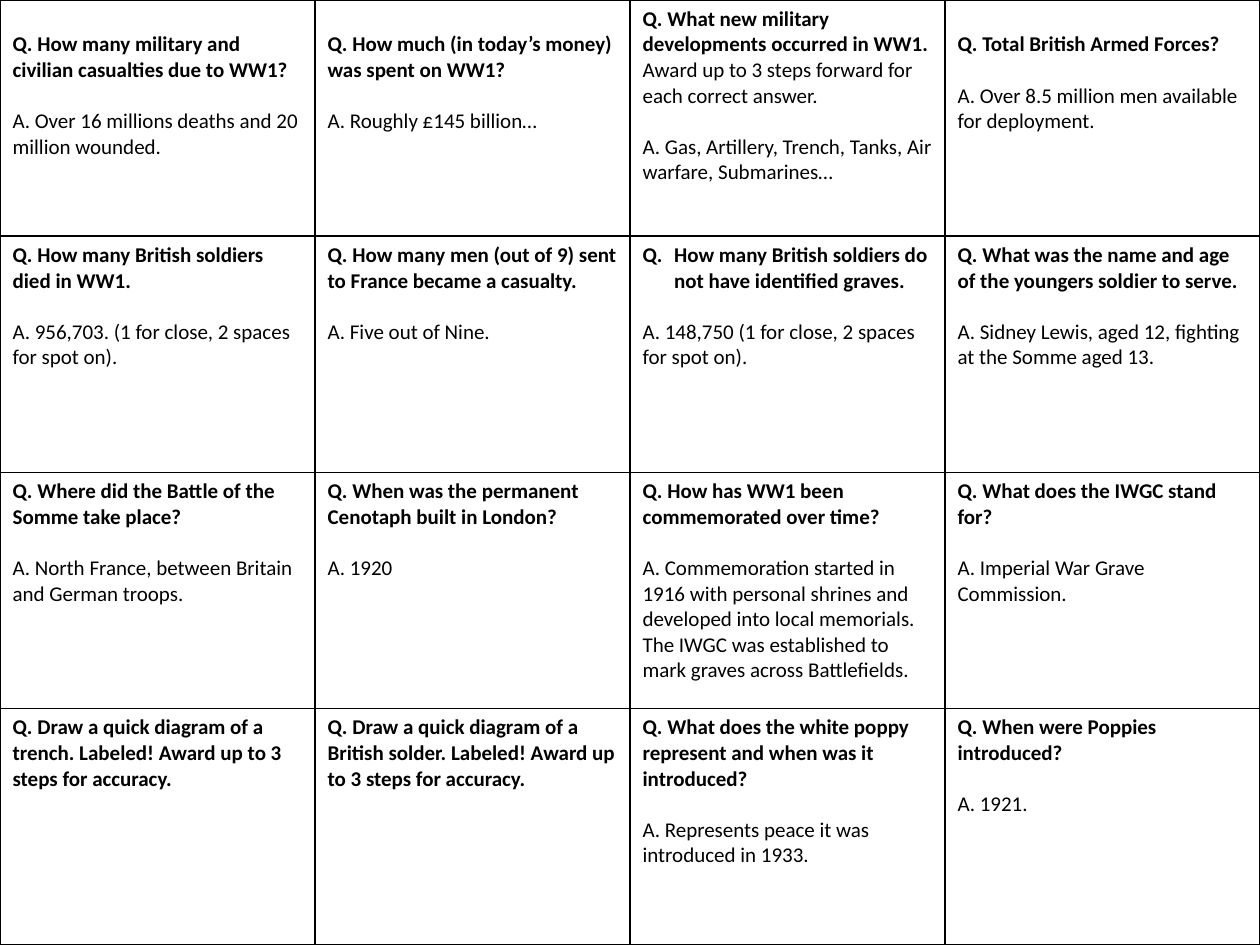
from dataclasses import dataclass

import pptx
import pptx.dml.color
import pptx.oxml
import pptx.oxml.ns
import pptx.util
from pptx.util import Pt

COLORS = {"text": "000000", "border": "000000", "background": "FFFFFF"}
FONT = {"name": "Calibri", "size": Pt(12)}
LINE_HEIGHT = 14.65
CELL_MARGIN = 3.6


@dataclass
class Card:
    question: str
    answer: str = ""
    note: str = ""
    lettered: bool = False


CARDS = [
    [
        Card("Q. How many military and civilian casualties due to WW1?",
             "A. Over 16 millions deaths and 20 million wounded."),
        Card("Q. How much (in today’s money) was spent on WW1?",
             "A. Roughly £145 billion…"),
        Card("Q. What new military developments occurred in WW1.",
             "A. Gas, Artillery, Trench, Tanks, Air warfare, Submarines…",
             note="Award up to 3 steps forward for each correct answer."),
        Card("Q. Total British Armed Forces?",
             "A. Over 8.5 million men available for deployment."),
    ],
    [
        Card("Q. How many British soldiers died in WW1.",
             "A. 956,703. (1 for close, 2 spaces for spot on)."),
        Card("Q. How many men (out of 9) sent to France became a casualty.",
             "A. Five out of Nine."),
        Card("How many British soldiers do not have identified graves.",
             "A. 148,750 (1 for close, 2 spaces for spot on).", lettered=True),
        Card("Q. What was the name and age of the youngers soldier to serve.",
             "A. Sidney Lewis, aged 12, fighting at the Somme aged 13."),
    ],
    [
        Card("Q. Where did the Battle of the Somme take place?",
             "A. North France, between Britain and German troops."),
        Card("Q. When was the permanent Cenotaph built in London?", "A. 1920"),
        Card("Q. How has WW1 been commemorated over time?",
             "A. Commemoration started in 1916 with personal shrines and "
             "developed into local memorials. The IWGC was established to "
             "mark graves across Battlefields."),
        Card("Q. What does the IWGC stand for?",
             "A. Imperial War Grave Commission."),
    ],
    [
        Card("Q. Draw a quick diagram of a trench. Labeled! "
             "Award up to 3 steps for accuracy."),
        Card("Q. Draw a quick diagram of a British solder. Labeled! "
             "Award up to 3 steps for accuracy."),
        Card("Q. What does the white poppy represent and when was it introduced?",
             "A. Represents peace it was introduced in 1933."),
        Card("Q. When were Poppies introduced?", "A. 1921."),
    ],
]


def rgb(name):
    return pptx.dml.color.RGBColor.from_string(COLORS[name])


def add_borders(cell):
    properties = cell._tc.get_or_add_tcPr()
    for index, side in enumerate(("lnL", "lnR", "lnT", "lnB")):
        properties.insert(index, pptx.oxml.parse_xml(
            f'<a:{side} {pptx.oxml.ns.nsdecls("a")} w="{Pt(1)}"><a:solidFill>'
            f'<a:srgbClr val="{COLORS["border"]}"/></a:solidFill></a:{side}>'))


def letter_paragraph(paragraph):
    """Number the paragraph with the letter Q on a hanging indent."""
    properties = paragraph._p.get_or_add_pPr()
    properties.set("marL", str(Pt(18)))
    properties.set("indent", str(-Pt(18)))
    properties.append(pptx.oxml.parse_xml(
        f'<a:buAutoNum {pptx.oxml.ns.nsdecls("a")} '
        'type="alphaUcPeriod" startAt="17"/>'))


def write_paragraph(paragraph, text, bold=False):
    run = paragraph.add_run()
    run.text = text
    for name, value in {**FONT, "bold": bold}.items():
        setattr(run.font, name, value)
    run.font.color.rgb = rgb("text")


def fill_card(cell, card, lowered):
    """Write one card; a lowered card starts one line further down."""
    cell.margin_top = Pt(CELL_MARGIN + (LINE_HEIGHT if lowered else 0))
    cell.fill.solid()
    cell.fill.fore_color.rgb = rgb("background")
    add_borders(cell)

    frame = cell.text_frame
    question = frame.paragraphs[0]
    if card.lettered:
        letter_paragraph(question)
    write_paragraph(question, card.question, bold=True)
    if card.note:
        write_paragraph(frame.add_paragraph(), card.note)
    if card.answer:
        answer = frame.add_paragraph()
        answer.space_before = Pt(LINE_HEIGHT)
        write_paragraph(answer, card.answer)


def add_card_table(slide, left, top, width, height):
    rows, columns = len(CARDS), len(CARDS[0])
    table = slide.shapes.add_table(
        rows, columns, Pt(left), Pt(top), Pt(width), Pt(height)).table
    table.first_row = table.horz_banding = False
    for column in table.columns:
        column.width = Pt(width / columns)
    for row in table.rows:
        row.height = Pt(height / rows)
    for row_index, card_row in enumerate(CARDS):
        for column_index, card in enumerate(card_row):
            lowered = row_index == 0 and not card.note
            fill_card(table.cell(row_index, column_index), card, lowered)


def main():
    presentation = pptx.Presentation()
    presentation.slide_width, presentation.slide_height = Pt(720), Pt(540)
    slide = presentation.slides.add_slide(presentation.slide_layouts[6])
    add_card_table(slide, 0, 0, 720, 540)
    presentation.save("out.pptx")


if __name__ == "__main__":
    main()
